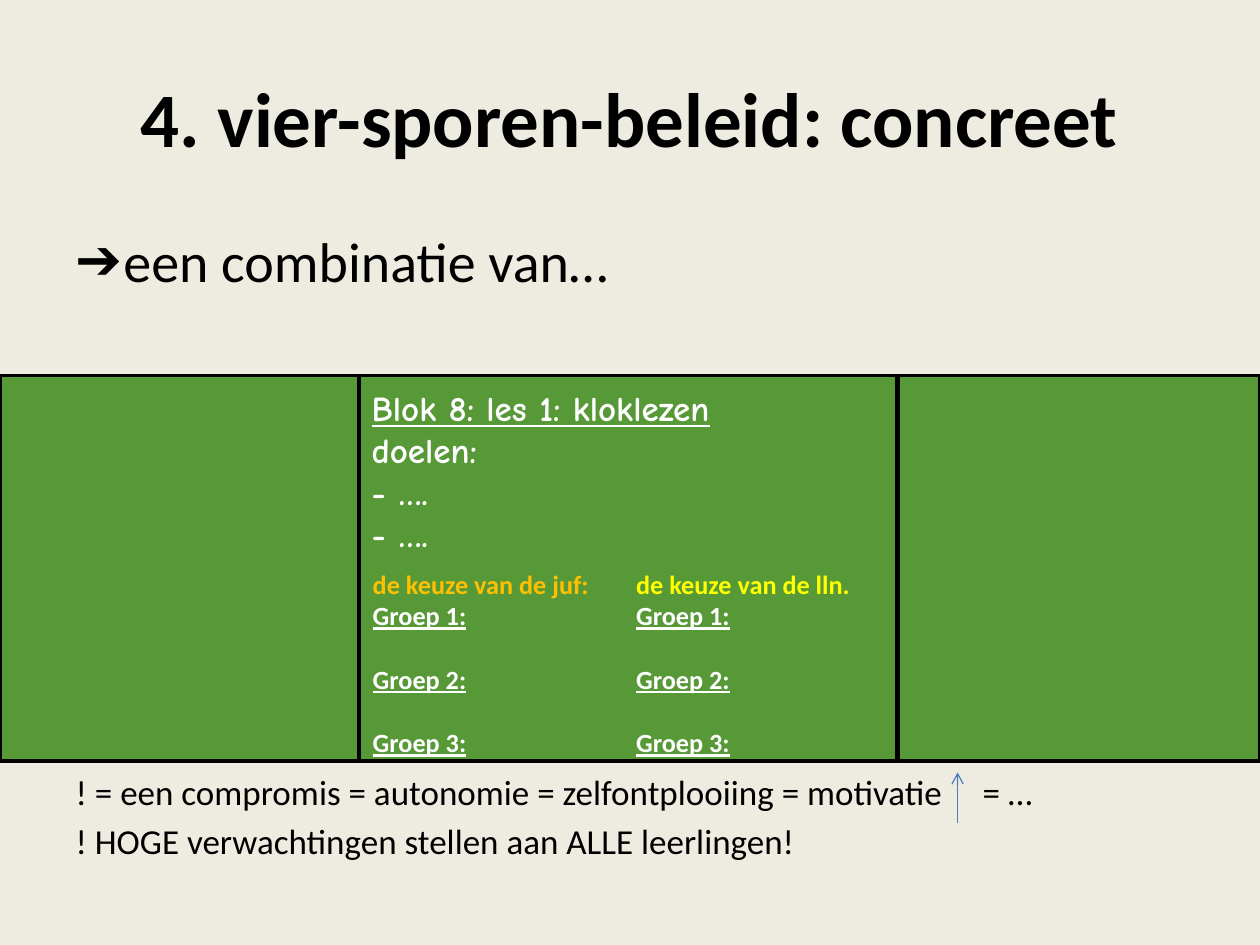
from lxml import etree
from pptx import Presentation
from pptx.dml.color import RGBColor
from pptx.enum import shapes, text
from pptx.oxml.ns import qn
from pptx.util import Inches, Pt

COLORS = {
    "background": "EEECE1",
    "text": "000000",
    "board": "589937",
    "chalk": "FFFFFF",
    "teacher": "FFC000",
    "pupils": "FFFF00",
    "arrow": "4B7EBC",
}


def rgb(name):
    return RGBColor.from_string(COLORS[name])


def write(paragraph, content, size, color="text", font="Calibri",
          bold=False, underline=False, before=0, spacing=0):
    """Add a run; spacing is the extra width per character in points."""
    if before:
        paragraph.space_before = Pt(before)
    run = paragraph.add_run()
    run.text = content
    run.font.size = Pt(size)
    run.font.name = font
    run.font.bold = bold
    run.font.underline = underline
    run.font.color.rgb = rgb(color)
    if spacing:
        run.font._element.set("spc", str(round(spacing * 100)))


def set_bullet(paragraph, indent=0, bullet=None):
    """Set a hanging bullet, or none."""
    properties = paragraph._p.get_or_add_pPr()
    properties.set("marL", str(Inches(indent)))
    properties.set("indent", str(-Inches(indent)))
    if bullet:
        etree.SubElement(properties, qn("a:buChar")).set("char", bullet)
    else:
        etree.SubElement(properties, qn("a:buNone"))


class SlideBuilder:
    def __init__(self, presentation):
        self.slide = presentation.slides.add_slide(presentation.slide_layouts[1])
        fill = self.slide.background.fill
        fill.solid()
        fill.fore_color.rgb = rgb("background")

    def placeholder(self, index, left, top, width, height):
        shape = self.slide.placeholders[index]
        shape.left, shape.top = Inches(left), Inches(top)
        shape.width, shape.height = Inches(width), Inches(height)
        shape.text_frame.auto_size = text.MSO_AUTO_SIZE.NONE
        return shape.text_frame

    def panel(self, left, top, width, height):
        shape = self.slide.shapes.add_shape(
            shapes.MSO_SHAPE.RECTANGLE,
            Inches(left), Inches(top), Inches(width), Inches(height))
        shape.shadow.inherit = False
        shape.fill.solid()
        shape.fill.fore_color.rgb = rgb("board")
        shape.line.color.rgb = rgb("text")
        shape.line.width = Pt(2)

    def text_box(self, left, top, width, height, lines):
        """Write lines given as (text, format) pairs."""
        box = self.slide.shapes.add_textbox(
            Inches(left), Inches(top), Inches(width), Inches(height))
        frame = box.text_frame
        frame.word_wrap = True
        for index, (content, style) in enumerate(lines):
            paragraph = frame.add_paragraph() if index else frame.paragraphs[0]
            write(paragraph, content, **style)

    def arrow(self, x, start, end):
        connector = self.slide.shapes.add_connector(
            shapes.MSO_CONNECTOR.STRAIGHT,
            Inches(x), Inches(start), Inches(x), Inches(end))
        connector.line.color.rgb = rgb("arrow")
        connector.line.width = Pt(0.75)
        line = connector.line._get_or_add_ln()
        etree.SubElement(line, qn("a:tailEnd")).set("type", "arrow")
        etree.SubElement(connector._element.spPr, qn("a:effectLst"))


def main():
    presentation = Presentation()
    presentation.slide_width = Inches(10)
    presentation.slide_height = Inches(7.5)
    builder = SlideBuilder(presentation)

    # Title
    title = builder.placeholder(0, 0.5, 0.3, 9, 1.25)
    title.vertical_anchor = text.MSO_ANCHOR.MIDDLE
    write(title.paragraphs[0], "4. vier-sporen-beleid: concreet", 44, bold=True)

    # Body: opening line above the board
    body = builder.placeholder(1, 0.5, 1.75, 9, 5.31)
    opening = body.paragraphs[0]
    write(opening, "een combinatie van…", 32)
    set_bullet(opening, indent=0.38, bullet="➔")

    # Conclusions below the board, with one widened space for the arrow
    compromise = body.add_paragraph()
    write(compromise, "! = een compromis = autonomie = zelfontplooiing = motivatie",
          20, before=272.5)
    write(compromise, " ", 20, spacing=18.3)
    write(compromise, "= …", 20)
    set_bullet(compromise)
    expectations = body.add_paragraph()
    write(expectations, "! HOGE verwachtingen stellen aan ALLE leerlingen!",
          20, before=4)
    set_bullet(expectations)

    # Blackboard: two wings and the middle panel
    for left, width in ((0, 2.87), (7.13, 2.87), (2.85, 4.27)):
        builder.panel(left, 2.98, width, 3.06)

    # Lesson and goals
    chalk = dict(size=20, color="chalk", font="Comic Neue", bold=True)
    builder.text_box(2.85, 3.02, 3.78, 1.78, [
        ("Blok 8: les 1: kloklezen", dict(chalk, underline=True)),
        ("doelen:", chalk),
        ("- ….", chalk),
        ("- ….", chalk),
    ])

    # Group choices, one empty line's height between groups
    choices = [
        (2.86, "de keuze van de juf:", "teacher"),
        (4.95, "de keuze van de lln.", "pupils"),
    ]
    for left, heading, color in choices:
        lines = [(heading, dict(size=15, color=color, bold=True))]
        for group in (1, 2, 3):
            lines.append((f"Groep {group}:", dict(
                size=15, color="chalk", bold=True, underline=True,
                before=0 if group == 1 else 18.3)))
        builder.text_box(left, 4.46, 2.12, 1.62, lines)

    # Rising motivation
    builder.arrow(7.6, 6.53, 6.13)

    presentation.save("out.pptx")


if __name__ == "__main__":
    main()
